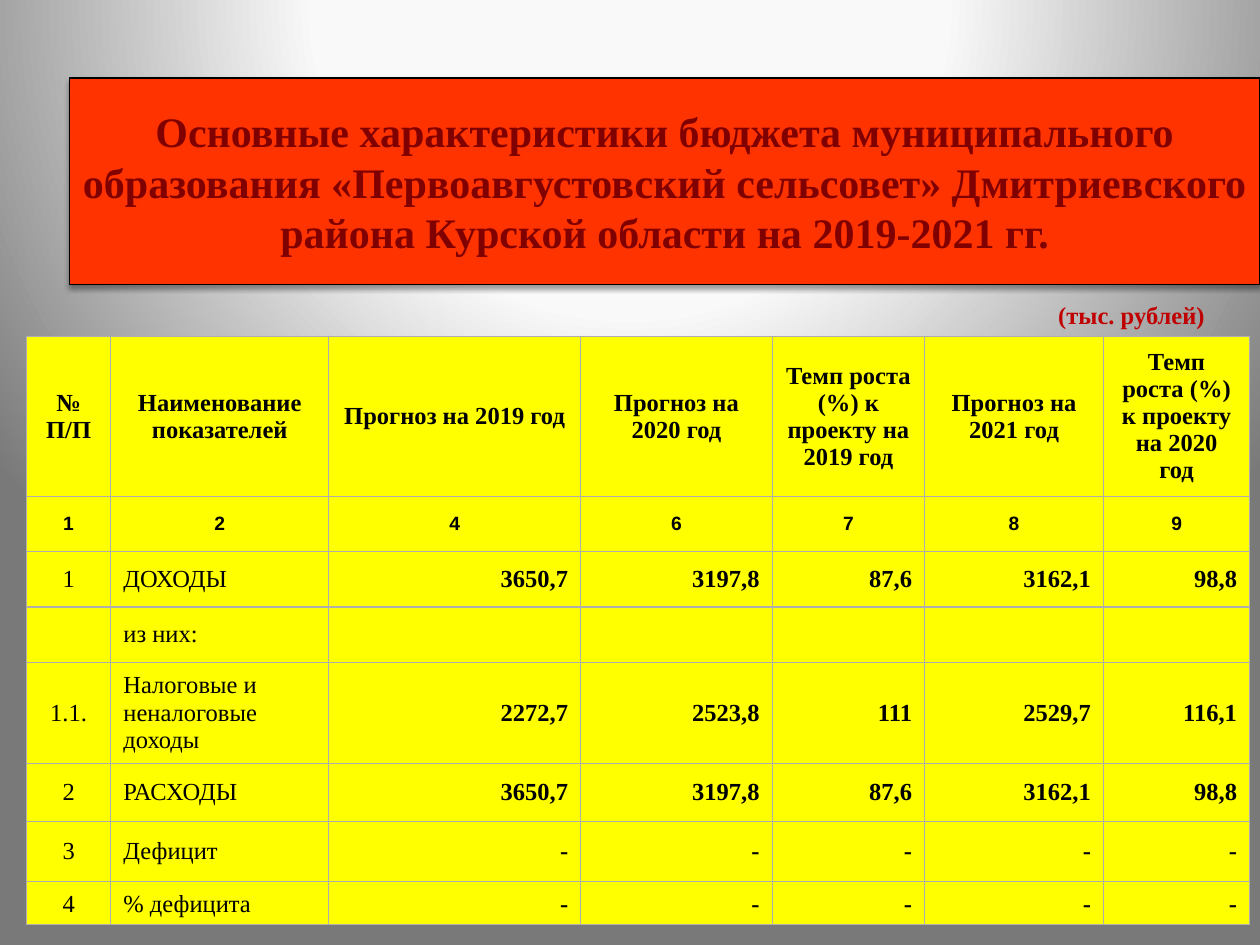
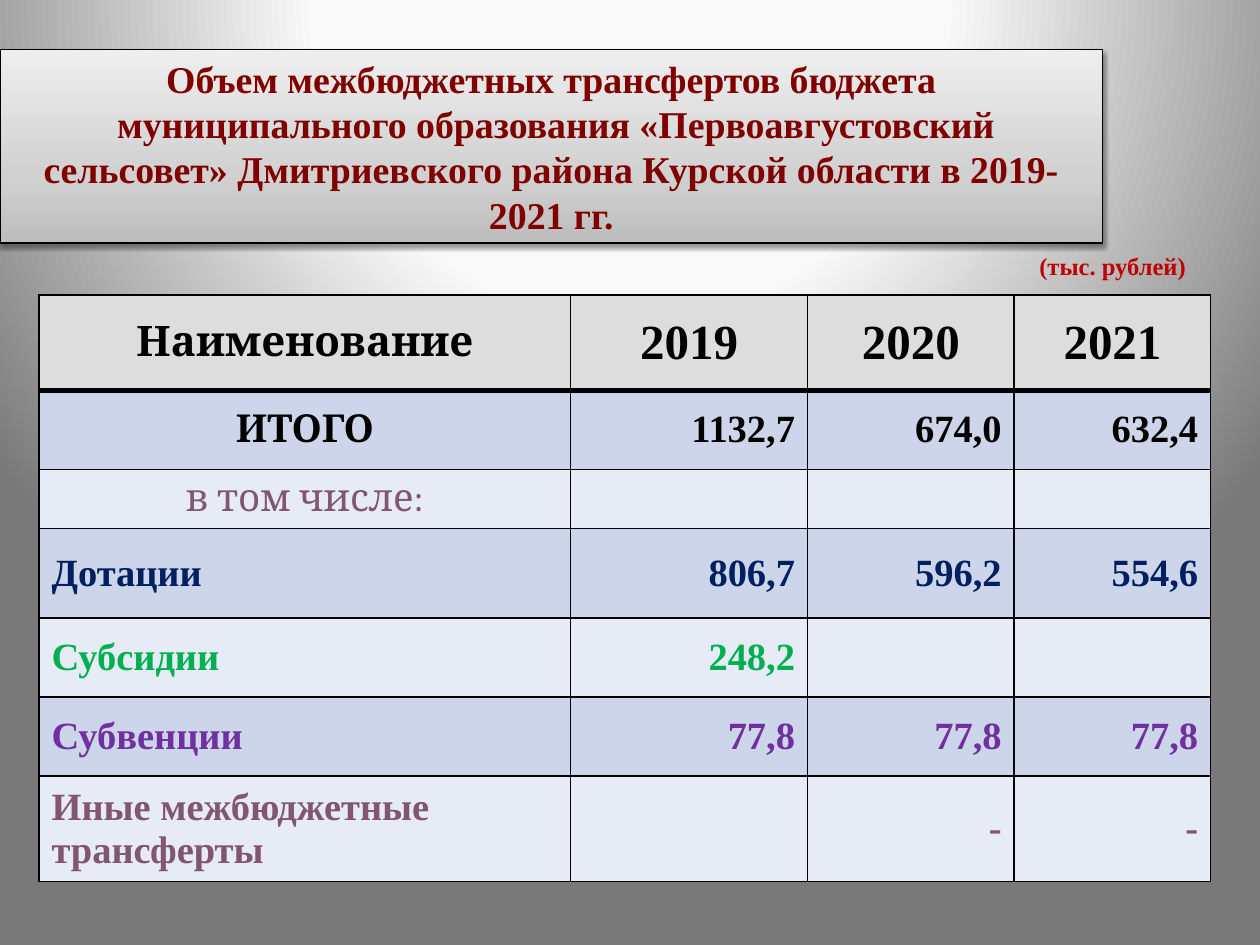
from dataclasses import dataclass

from lxml.etree import SubElement
from pptx import Presentation
from pptx.dml.color import RGBColor
from pptx.enum.shapes import MSO_SHAPE
from pptx.enum.text import MSO_ANCHOR, PP_ALIGN
from pptx.oxml import parse_xml
from pptx.oxml.ns import nsdecls, qn
from pptx.util import Emu, Inches, Pt

LEFT, CENTER, RIGHT = PP_ALIGN.LEFT, PP_ALIGN.CENTER, PP_ALIGN.RIGHT
WIDTH, HEIGHT = Inches(10), Inches(7.5)


@dataclass(frozen=True)
class Theme:
    serif: str = "Times New Roman"
    sans: str = "Arial"
    heading: str = "Cambria"
    black: str = "000000"
    title: str = "800000"
    unit: str = "C00000"
    red: str = "FF3300"
    yellow: str = "FFFF00"
    grid: str = "AEAEAE"
    header: str = "DDDDDD"
    bands: tuple = ("CCD5EA", "E7EBF5")
    mauve: str = "805671"
    navy: str = "002060"
    green: str = "00B050"
    violet: str = "7030A0"
    backdrop: tuple = ((0, "FBFBFB"), (40, "F9F9F9"), (100, "797979"))
    silver: tuple = ((0, "BDBDBD"), (35, "D1D1D1"), (100, "EEEEEE"))
    number_size: float = 11
    body_size: float = 14
    total_size: float = 22
    heading_size: float = 24
    year_size: float = 28


T = Theme()


@dataclass(frozen=True)
class Box:
    """A region in percent of the slide's width and height."""
    x: float
    y: float
    w: float
    h: float

    def emu(self):
        return [Emu(int(share * side / 100)) for share, side in
                ((self.x, WIDTH), (self.y, HEIGHT), (self.w, WIDTH), (self.h, HEIGHT))]


@dataclass(frozen=True)
class Style:
    size: float = T.body_size
    color: str = T.black
    bold: bool = True
    font: str = T.serif
    align: int = LEFT


def rgb(value):
    return RGBColor.from_string(value)


def write(tf, text, style):
    tf.text = text
    for p in tf.paragraphs:
        p.alignment = style.align
        for r in p.runs:
            r.font.size, r.font.bold, r.font.name = Pt(style.size), style.bold, style.font
            r.font.color.rgb = rgb(style.color)


def gradient(stops, direction):
    """Gradient fill element; direction is its a:lin or a:path child."""
    marks = "".join(f'<a:gs pos="{pos * 1000}"><a:srgbClr val="{color}"/></a:gs>'
                    for pos, color in stops)
    return (f'<a:gradFill {nsdecls("a")} rotWithShape="1"><a:gsLst>{marks}</a:gsLst>'
            f'{direction}</a:gradFill>')


def add_slide(prs):
    s = prs.slides.add_slide(prs.slide_layouts[6])
    glow = gradient(T.backdrop, '<a:path path="circle"><a:fillToRect l="50000" t="-80000" '
                                'r="50000" b="180000"/></a:path>')
    s.element.cSld.insert(0, parse_xml(
        f'<p:bg {nsdecls("p", "a")}><p:bgPr>{glow}<a:effectLst/></p:bgPr></p:bg>'))
    return s


def add_title(s, box, text, size, color=None):
    """Title band, filled with the colour or else with the silver gradient."""
    sp = s.shapes.add_shape(MSO_SHAPE.RECTANGLE, *box.emu())
    props = sp.element.spPr
    if color:
        sp.fill.solid()
        sp.fill.fore_color.rgb = rgb(color)
    else:
        props.append(parse_xml(gradient(T.silver, '<a:lin ang="16200000" scaled="1"/>')))
    sp.line.color.rgb = rgb(T.black)
    sp.line.width = Pt(0.75)
    props.append(parse_xml(
        f'<a:effectLst {nsdecls("a")}><a:outerShdw blurRad="{Pt(3.1)}" dist="{Pt(1.6)}" '
        'dir="5400000" rotWithShape="0"><a:srgbClr val="000000"><a:alpha val="38000"/>'
        '</a:srgbClr></a:outerShdw></a:effectLst>'))
    tf = sp.text_frame
    tf.word_wrap, tf.vertical_anchor = True, MSO_ANCHOR.MIDDLE
    write(tf, text, Style(size, T.title, align=CENTER))


def add_unit(s, x, y):
    tf = s.shapes.add_textbox(*Box(x, y, 14.2, 4.4).emu()).text_frame
    tf.word_wrap = True
    write(tf, "(тыс. рублей)", Style(color=T.unit))


def set_borders(cell, color, top, bottom, side):
    props = cell._tc.get_or_add_tcPr()
    for i, (edge, width) in enumerate(zip("LRTB", (side, side, top, bottom))):
        ln = props.makeelement(qn(f"a:ln{edge}"), {"w": str(Pt(width))})
        fill = SubElement(ln, qn("a:solidFill"))
        SubElement(fill, qn("a:srgbClr"), val=color)
        props.insert(i, ln)


def add_grid(s, box, cols, rows, data, style_of, fill_of, borders_of, anchor_of):
    """Table whose column and row weights share out the box."""
    x, y, w, h = box.emu()
    table = s.shapes.add_table(len(rows), len(cols), x, y, w, h).table
    table.first_row = table.horz_banding = False
    for column, weight in zip(table.columns, cols):
        column.width = Emu(int(w * weight / sum(cols)))
    for row, weight in zip(table.rows, rows):
        row.height = Emu(int(h * weight / sum(rows)))
    for i, values in enumerate(data):
        for j, value in enumerate(values):
            cell = table.cell(i, j)
            cell.vertical_anchor = anchor_of(i)
            cell.fill.solid()
            cell.fill.fore_color.rgb = rgb(fill_of(i))
            set_borders(cell, *borders_of(i))
            write(cell.text_frame, value, style_of(i, j))


def budget_slide(prs):
    s = add_slide(prs)
    add_title(s, Box(5.5, 8.27, 94.5, 21.87),
              "Основные характеристики бюджета муниципального образования "
              "«Первоавгустовский сельсовет» Дмитриевского района Курской области "
              "на 2019-2021 гг.", T.heading_size, T.red)
    add_unit(s, 83, 31.07)
    data = [
        ("№ П/П", "Наименование показателей", "Прогноз на 2019 год",
         "Прогноз на 2020 год", "Темп роста (%) к проекту на 2019 год",
         "Прогноз на 2021 год", "Темп роста (%) к проекту на 2020 год"),
        tuple("1246789"),
        ("1", "ДОХОДЫ", "3650,7", "3197,8", "87,6", "3162,1", "98,8"),
        ("", "из них:", *[""] * 5),
        ("1.1.", "Налоговые и неналоговые доходы",
         "2272,7", "2523,8", "111", "2529,7", "116,1"),
        ("2", "РАСХОДЫ", "3650,7", "3197,8", "87,6", "3162,1", "98,8"),
        ("3", "Дефицит", *"-----"),
        ("4", "% дефицита", *"-----"),
    ]
    data[1] = ("1", "2", "4", "6", "7", "8", "9")

    def style_of(i, j):
        if i == 0:
            return Style(align=CENTER)
        if i == 1:
            return Style(T.number_size, font=T.sans, align=CENTER)
        return Style(bold=j > 1, align=(CENTER, LEFT)[j] if j < 2 else RIGHT)

    last = len(data) - 1
    add_grid(s, Box(2.1, 35.6, 97.1, 62.2),
             (0.67, 1.73, 2, 1.52, 1.21, 1.42, 1.16),
             (1.27, 0.44, 0.44, 0.44, 0.8, 0.46, 0.48, 0.34), data, style_of,
             fill_of=lambda i: T.yellow,
             borders_of=lambda i: (T.grid, 0.75, 0.75, 0.75),
             anchor_of=lambda i: MSO_ANCHOR.BOTTOM if i == last else MSO_ANCHOR.MIDDLE)


def transfers_slide(prs):
    s = add_slide(prs)
    data = [
        ("Наименование", "2019", "2020", "2021"),
        ("ИТОГО", "1132,7", "674,0", "632,4"),
        ("в том числе:", "", "", ""),
        ("Дотации", "806,7", "596,2", "554,6"),
        ("Субсидии", "248,2", "", ""),
        ("Субвенции", "77,8", "77,8", "77,8"),
        ("Иные межбюджетные трансферты", "", "-", "-"),
    ]
    row_colors = (T.black, T.black, T.mauve, T.navy, T.green, T.violet, T.mauve)

    def style_of(i, j):
        size = T.total_size
        if i == 0:
            size = T.year_size if j else T.heading_size
        align = CENTER if i == 0 or (j == 0 and i < 3) else RIGHT if j else LEFT
        return Style(size, row_colors[i], bold=i != 2, align=align,
                     font=T.heading if j == 0 and i < 3 else T.serif)

    add_grid(s, Box(3.1, 31.2, 93, 62), (4.22, 1.88, 1.64, 1.56),
             (0.76, 0.63, 0.47, 0.71, 0.63, 0.63, 0.83), data, style_of,
             fill_of=lambda i: T.bands[(i - 1) % 2] if i else T.header,
             borders_of=lambda i: (T.black, 3 if i == 1 else 1, 1 if i else 3, 1),
             anchor_of=lambda i: MSO_ANCHOR.MIDDLE)
    add_title(s, Box(0, 5.2, 87.5, 20.53),
              "Объем межбюджетных трансфертов бюджета\v муниципального образования "
              "«Первоавгустовский сельсовет» Дмитриевского района Курской области "
              "в 2019-2021 гг.", 21.6)
    add_unit(s, 81.5, 25.87)


def main():
    prs = Presentation()
    prs.slide_width, prs.slide_height = WIDTH, HEIGHT
    budget_slide(prs)
    transfers_slide(prs)
    prs.save("out.pptx")


if __name__ == "__main__":
    main()
